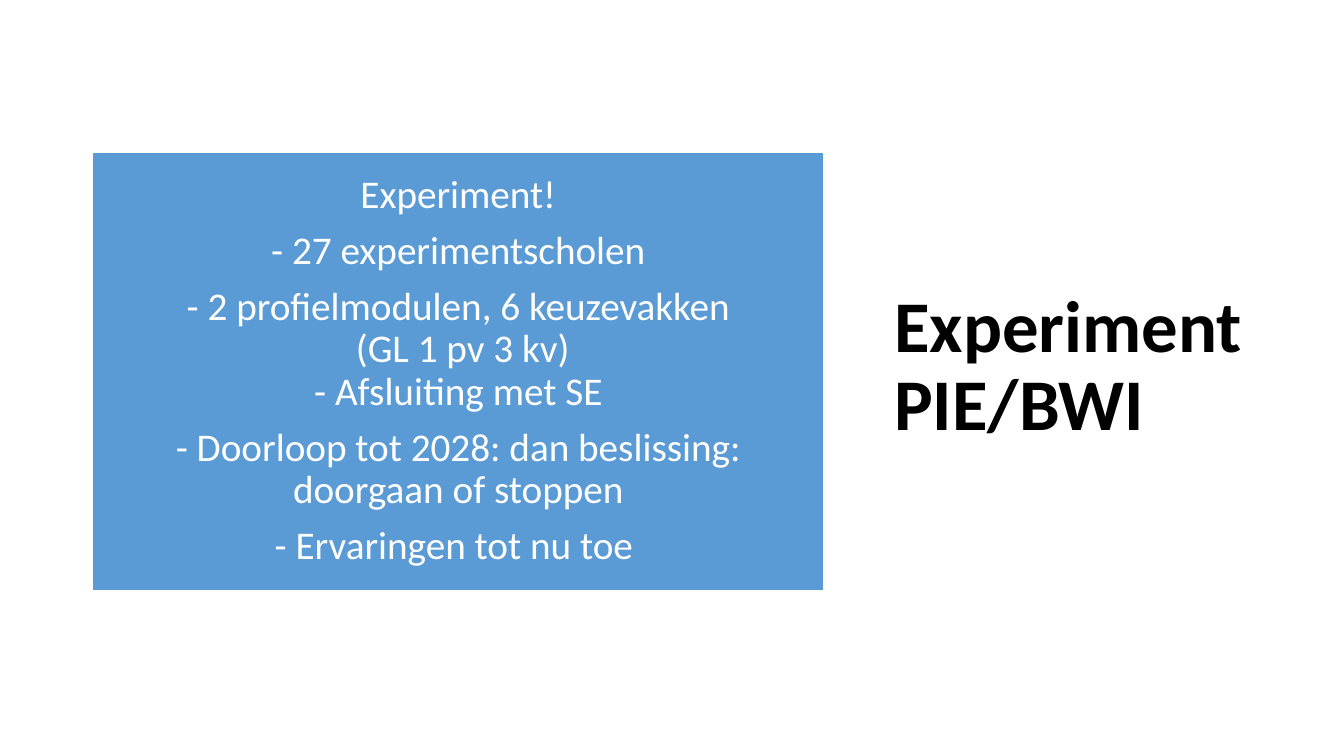
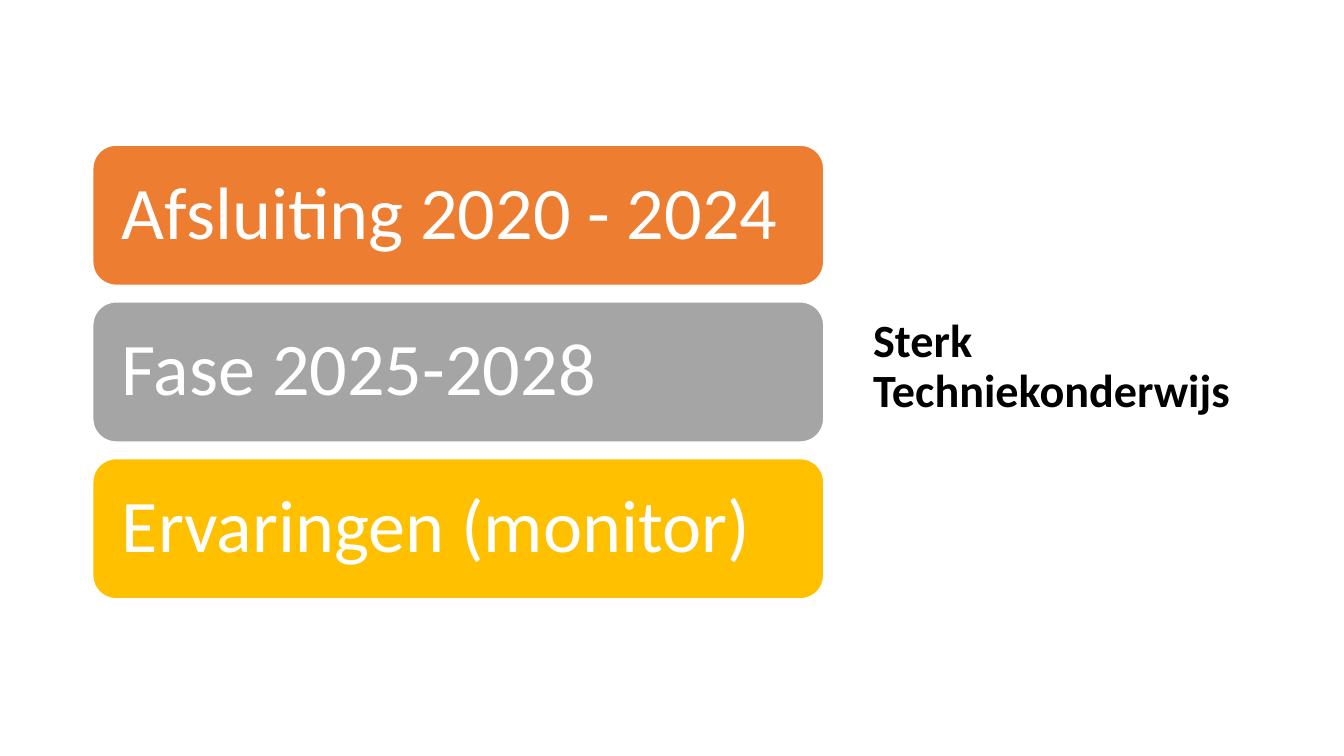
from pptx import Presentation
from pptx.dml.color import RGBColor
from pptx.enum.shapes import MSO_SHAPE as Shape
from pptx.enum.text import MSO_ANCHOR as Anchor, MSO_AUTO_SIZE as AutoSize, PP_ALIGN as Align
from pptx.util import Inches, Pt

FONT = "Calibri"
WHITE, BLACK = "FFFFFF", "000000"
BLUE, ORANGE, GRAY, GOLD = "5B9BD5", "ED7D31", "A5A5A5", "FFC000"

# Column of blocks shared by both slides
BLOCK_LEFT, BLOCK_WIDTH = 0.92, 7.25
TITLE_TOP, TITLE_HEIGHT = 0.6, 6.1
SPACE_AFTER = 0.35  # share of the text size

EXPERIMENT_POINTS = [
    "Experiment!",
    "- 27 experimentscholen",
    "- 2 profielmodulen, 6 keuzevakken\v (GL 1 pv 3 kv)\v- Afsluiting met SE",
    "- Doorloop tot 2028: dan beslissing: doorgaan of stoppen",
    "- Ervaringen tot nu toe ",
]
PHASES = [
    ("Afsluiting 2020 - 2024", ORANGE),
    ("Fase 2025-2028", GRAY),
    ("Ervaringen (monitor)", GOLD),
]


def color(value):
    return RGBColor.from_string(value)


def set_all(target, values):
    for name, value in values.items():
        setattr(target, name, value)


def write(frame, lines, size, ink, bold=False, align=Align.LEFT, inset=0.1):
    """Fill a text frame with evenly spaced paragraphs."""
    margins = {f"margin_{side}": Inches(inset if side in ("left", "right") else inset)
               for side in ("left", "right", "top", "bottom")}
    set_all(frame, {"word_wrap": True, "auto_size": AutoSize.NONE,
                    "vertical_anchor": Anchor.MIDDLE, **margins})
    frame.text = "\n".join(lines)
    for paragraph in frame.paragraphs:
        set_all(paragraph, {"alignment": align, "line_spacing": 0.9})
        for run in paragraph.runs:
            set_all(run.font, {"name": FONT, "size": Pt(size), "bold": bold})
            run.font.color.rgb = color(ink)
    for paragraph in frame.paragraphs[:-1]:
        paragraph.space_after = Pt(size * SPACE_AFTER)


def add_titled_slide(deck, title, left, width, size):
    slide = deck.slides.add_slide(deck.slide_layouts[5])
    set_all(slide.shapes.title, {
        "left": Inches(left), "top": Inches(TITLE_TOP),
        "width": Inches(width), "height": Inches(TITLE_HEIGHT)})
    write(slide.shapes.title.text_frame, [title], size, BLACK, bold=True)
    return slide


def add_block(slide, kind, top, height, fill, lines, size, **text_format):
    block = slide.shapes.add_shape(kind, Inches(BLOCK_LEFT), Inches(top),
                                   Inches(BLOCK_WIDTH), Inches(height))
    block.shadow.inherit = False
    block.fill.solid()
    block.fill.fore_color.rgb = color(fill)
    block.line.color.rgb = color(WHITE)
    block.line.width = Pt(1)
    write(block.text_frame, lines, size, WHITE, **text_format)


def add_phase_stack(slide, top=1.44, bottom=5.94, height=1.39):
    pitch = (bottom - top - height) / (len(PHASES) - 1)
    for row, (phase, fill) in enumerate(PHASES):
        add_block(slide, Shape.ROUNDED_RECTANGLE, top + row * pitch, height,
                  fill, [phase], 53, inset=0.22)


def main():
    deck = Presentation()
    set_all(deck, {"slide_width": Inches(13.33), "slide_height": Inches(7.5)})

    # Slide 1: the experiment
    experiment = add_titled_slide(deck, "Experiment PIE/BWI", 8.77, 3.78, 52)
    add_block(experiment, Shape.RECTANGLE, 1.51, 4.35, BLUE, EXPERIMENT_POINTS, 28,
              align=Align.CENTER, inset=0.12)

    # Slide 2: the phases of the programme
    programme = add_titled_slide(deck, "Sterk Techniekonderwijs", 8.56, 3.85, 33)
    add_phase_stack(programme)

    deck.save("out.pptx")


if __name__ == "__main__":
    main()
